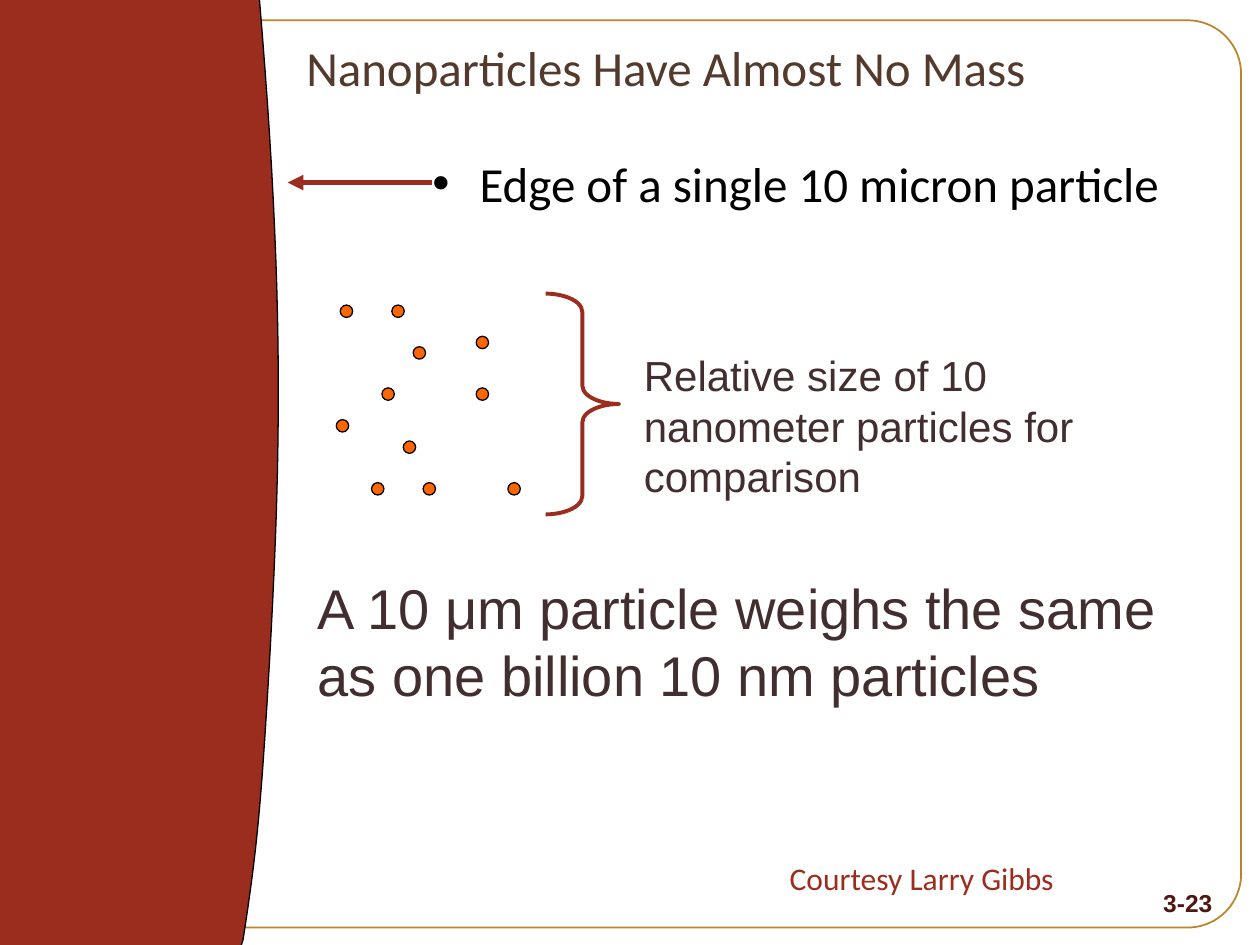
from lxml.etree import SubElement
from pptx import Presentation
from pptx.dml.color import RGBColor
from pptx.enum.shapes import MSO_CONNECTOR, MSO_SHAPE as Shape
from pptx.enum.text import MSO_ANCHOR as Anchor, MSO_AUTO_SIZE as AutoSize, PP_ALIGN as Align
from pptx.oxml.ns import qn
from pptx.util import Cm, Pt

RUST, BLACK, ORANGE, GOLD = "9B2D1F", "000000", "FF6600", "B77513"
TITLE_BROWN, TEXT_BROWN, NUMBER_BROWN = "533A2C", "422E2E", "4E1710"

DOT_SIZE = 0.25
DOTS = [(8.33, 6.99), (8.13, 8.89), (7.7, 7.82), (9.6, 6.78),
        (10.24, 9.73), (9.6, 7.82), (6.78, 8.46), (8.53, 9.73),
        (7.49, 9.73), (7.9, 6.15), (6.86, 6.15)]

PARTICLE_START = (5.16, -0.84)
PARTICLE_CURVES = [
    ((5.72, 5.51), (5.69, 8.69), (5.44, 13.23)),
    ((5.26, 16.31), (5.18, 17.12), (4.9, 18.95)),
    ((4.65, 20.75), (-3.12, 20.5), (-4.83, 17.58)),
    ((-6.53, 14.63), (-6.99, 4.45), (-5.31, 1.37)),
    ((-3.66, -1.7), (2.97, -0.38), PARTICLE_START),
]
CURVE_STEPS = 24


def color(hex_code):
    return RGBColor.from_string(hex_code)


def cm_box(box):
    return [Cm(length) for length in box]


def paint(shape, fill, line, width):
    shape.shadow.inherit = False
    if fill:
        shape.fill.solid()
        shape.fill.fore_color.rgb = color(fill)
    else:
        shape.fill.background()
    shape.line.color.rgb = color(line)
    shape.line.width = Pt(width)


def add_preset(shapes, kind, box, fill, line, width, adjustments=()):
    shape = shapes.add_shape(kind, *cm_box(box))
    paint(shape, fill, line, width)
    for index, value in enumerate(adjustments):
        shape.adjustments[index] = value
    return shape


def write(frame, text, font, size, hex_code, align=Align.LEFT, bold=False, wrap=True):
    frame.text = text
    frame.word_wrap = wrap
    paragraph = frame.paragraphs[0]
    paragraph.alignment = align
    paragraph.font.name = font
    paragraph.font.size = Pt(size)
    paragraph.font.bold = bold
    paragraph.font.color.rgb = color(hex_code)


def add_text(slide, box, *style, **options):
    frame = slide.shapes.add_textbox(*cm_box(box)).text_frame
    write(frame, *style, **options)
    return frame


def fill_placeholder(placeholder, box, anchor, text, size, hex_code):
    placeholder.left, placeholder.top, placeholder.width, placeholder.height = cm_box(box)
    frame = placeholder.text_frame
    frame.auto_size = AutoSize.NONE
    frame.vertical_anchor = anchor
    properties = frame.paragraphs[0]._p.get_or_add_pPr()
    SubElement(properties, qn("a:buNone"))
    write(frame, text, "Calibri", size, hex_code)
    frame.paragraphs[0].space_before = Pt(0)
    return properties


def add_frame(slide):
    frame = add_preset(slide.shapes, Shape.ROUNDED_RECTANGLE, (1.5, 0.41, 23.52, 18.29),
                       None, GOLD, 1, [0.059])
    line_color = frame._element.spPr.find(".//" + qn("a:srgbClr"))
    SubElement(line_color, qn("a:alpha"), val="90000")


def curve_points(start, curves):
    for first, second, end in curves:
        for step in range(1, CURVE_STEPS + 1):
            t = step / CURVE_STEPS
            u = 1 - t
            yield tuple(
                Cm(u**3 * a + 3 * u**2 * t * b + 3 * u * t**2 * c + t**3 * d)
                for a, b, c, d in zip(start, first, second, end))
        start = end


def add_large_particle(slide):
    builder = slide.shapes.build_freeform(*cm_box(PARTICLE_START))
    builder.add_line_segments(list(curve_points(PARTICLE_START, PARTICLE_CURVES)), close=True)
    paint(builder.convert_to_shape(), RUST, BLACK, 0.75)


def add_arrow(slide, start, end):
    arrow = slide.shapes.add_connector(MSO_CONNECTOR.STRAIGHT, *cm_box(start + end))
    arrow.line.color.rgb = color(RUST)
    arrow.line.width = Pt(3)
    properties = arrow._element.spPr
    SubElement(properties.find(qn("a:ln")), qn("a:tailEnd"), type="triangle")
    SubElement(properties, qn("a:effectLst"))


def add_nanoparticles(slide):
    cluster = slide.shapes.add_group_shape()
    for left, top in DOTS:
        add_preset(cluster.shapes, Shape.OVAL, (left, top, DOT_SIZE, DOT_SIZE),
                   ORANGE, BLACK, 0.75)


def main():
    deck = Presentation()
    deck.slide_width, deck.slide_height = Cm(25.4), Cm(19.05)
    slide = deck.slides.add_slide(deck.slide_layouts[1])
    title, edge_label = slide.placeholders

    fill_placeholder(title, (5.92, 0.43, 20.32, 1.85), Anchor.MIDDLE,
                     "Nanoparticles Have Almost No Mass", 28, TITLE_BROWN)
    edge_paragraph = fill_placeholder(edge_label, (8.46, 2.97, 16.3, 1.47), Anchor.TOP,
                                      "Edge of a single 10 micron particle", 28, BLACK)
    edge_paragraph.set("marL", str(Cm(1.02)))
    edge_paragraph.set("indent", str(Cm(-0.79)))

    add_frame(slide)
    add_large_particle(slide)
    add_arrow(slide, (8.71, 3.68), (5.8, 3.68))
    add_text(slide, (12.73, 6.93, 11.63, 2.54),
             "Relative size of 10 nanometer particles for comparison", "Arial", 24, TEXT_BROWN)
    add_nanoparticles(slide)
    add_text(slide, (6.15, 11.43, 18.62, 2.54),
             "A 10 μm particle weighs the same as one billion 10 nm particles",
             "Arial", 32, TEXT_BROWN)
    add_preset(slide.shapes, Shape.RIGHT_BRACE, (11, 5.92, 1.48, 4.45),
               None, RUST, 2.25, [0.25, 0.5])
    credit = add_text(slide, (15.67, 17.2, 6.2, 1.02), "Courtesy Larry Gibbs",
                      "Calibri", 18, RUST, wrap=False)
    credit.auto_size = AutoSize.SHAPE_TO_FIT_TEXT
    add_text(slide, (22.91, 17.78, 1.78, 0.74), "3-23", "Arial", 14, NUMBER_BROWN,
             align=Align.RIGHT, bold=True)
    deck.save("out.pptx")


if __name__ == "__main__":
    main()
